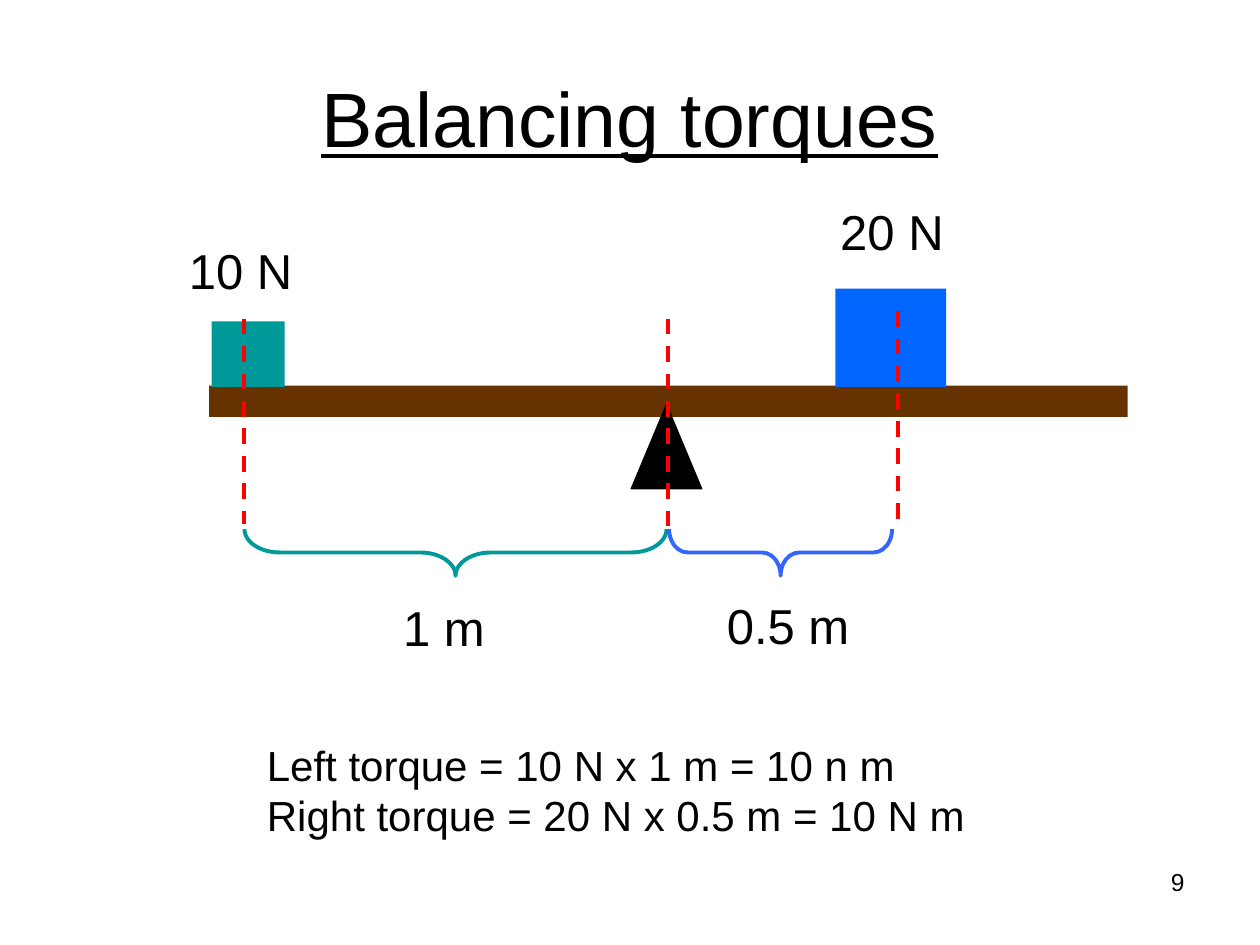
from lxml.etree import SubElement
from pptx import Presentation
from pptx.dml.color import RGBColor
from pptx.enum.dml import MSO_LINE
from pptx.enum.shapes import MSO_CONNECTOR, MSO_SHAPE
from pptx.enum.text import MSO_ANCHOR, MSO_AUTO_SIZE, PP_ALIGN
from pptx.oxml.ns import qn
from pptx.util import Inches, Pt

COLORS = {
    "text": "000000",
    "beam": "663300",
    "pivot": "000000",
    "light_weight": "009999",
    "heavy_weight": "0066FF",
    "left_brace": "009999",
    "right_brace": "3366FF",
    "guide": "FF0000",
}
FONT = "Arial"


def color(name):
    return RGBColor.from_string(COLORS[name])


def format_text(text_frame, size, alignment=PP_ALIGN.LEFT, underline=None):
    for paragraph in text_frame.paragraphs:
        paragraph.alignment = alignment
        for run in paragraph.runs:
            run.font.name = FONT
            run.font.size = Pt(size)
            run.font.underline = underline
            run.font.color.rgb = color("text")


def add_text(slide, box, text, size, alignment=PP_ALIGN.LEFT, wrap=False):
    shape = slide.shapes.add_textbox(*map(Inches, box))
    text_frame = shape.text_frame
    text_frame.text = text
    text_frame.word_wrap = wrap
    if not wrap:
        text_frame.auto_size = MSO_AUTO_SIZE.SHAPE_TO_FIT_TEXT
    format_text(text_frame, size, alignment)


def add_solid(slide, kind, box, color_name):
    shape = slide.shapes.add_shape(kind, *map(Inches, box))
    shape.shadow.inherit = False
    shape.fill.solid()
    shape.fill.fore_color.rgb = color(color_name)
    shape.line.fill.background()
    return shape


def add_guide(slide, x, top, bottom):
    line = slide.shapes.add_connector(
        MSO_CONNECTOR.STRAIGHT, Inches(x), Inches(top), Inches(x), Inches(bottom))
    line.line.color.rgb = color("guide")
    line.line.width = Pt(2.25)
    line.line.dash_style = MSO_LINE.DASH
    SubElement(line._element.spPr, qn("a:effectLst"))


def add_brace_below(slide, box, curve, color_name):
    """Turn a right brace by 90 degrees so that it fills the box, pointing down."""
    left, top, width, height = box
    shape = slide.shapes.add_shape(
        MSO_SHAPE.RIGHT_BRACE,
        Inches(left + (width - height) / 2), Inches(top + (height - width) / 2),
        Inches(height), Inches(width))
    shape.rotation = 90
    shape.adjustments[0] = curve
    shape.shadow.inherit = False
    shape.fill.background()
    shape.line.color.rgb = color(color_name)
    shape.line.width = Pt(2.25)


def add_title(slide, box, text):
    title = slide.shapes.title
    title.left, title.top, title.width, title.height = map(Inches, box)
    title.text_frame.text = text
    title.text_frame.vertical_anchor = MSO_ANCHOR.MIDDLE
    format_text(title.text_frame, 44, PP_ALIGN.CENTER, underline=True)


def add_seesaw(slide, box):
    """Place beam, pivot and both labelled weights; the box is that of the beam."""
    left, top, width, height = box
    add_solid(slide, MSO_SHAPE.RECTANGLE, box, "beam")
    pivot = add_solid(slide, MSO_SHAPE.ISOSCELES_TRIANGLE,
                      (left + 3.35, top + 0.15, 0.56, 0.67), "pivot")
    pivot.line.color.rgb = color("pivot")
    pivot.line.width = Pt(0.75)

    weights = [
        ("10 N", "light_weight", 0.02, 0.58, 0.52, -0.26, -1.2),
        ("20 N", "heavy_weight", 4.97, 0.88, 0.78, 4.91, -1.51),
    ]
    for label, name, x, weight_width, weight_height, label_x, label_y in weights:
        weight_top = top + 0.01 - weight_height
        add_solid(slide, MSO_SHAPE.RECTANGLE,
                  (left + x, weight_top, weight_width, weight_height), name)
        add_text(slide, (left + label_x, top + label_y, 1.02, 0.57), label, 28)


def add_distances(slide, box):
    """Mark both lever arms with dashed guides, braces and lengths."""
    left, top, width, height = box
    for x, start, end in [(0, 0.06, 1.69), (3.36, 0.06, 1.78), (width, 0, 1.65)]:
        add_guide(slide, left + x, top + start, top + end)

    arms = [
        ("1 m", "left_brace", 0, 3.35, 0.755, 1.16, 0.85, 2.22),
        ("0.5 m", "right_brace", 3.37, 1.77, 0.398, 3.73, 1.18, 2.21),
    ]
    for label, name, x, span, curve, label_x, label_width, label_y in arms:
        add_brace_below(slide, (left + x, top + 1.73, span, 0.37), curve, name)
        add_text(slide, (left + label_x, top + label_y, label_width, 0.57), label, 28)


def main():
    presentation = Presentation()
    presentation.slide_width = Inches(10)
    presentation.slide_height = Inches(7.5)
    slide = presentation.slides.add_slide(presentation.slide_layouts[5])

    add_title(slide, (0.5, 0.3, 9, 1.25), "Balancing torques")
    add_seesaw(slide, (1.66, 3.06, 7.29, 0.25))
    add_distances(slide, (1.94, 2.47, 5.19, 2.79))
    add_text(slide, (2.02, 5.82, 5.74, 0.9),
             "Left torque = 10 N x 1 m = 10 n m\n"
             "Right torque = 20 N x 0.5 m = 10 N m", 24)
    add_text(slide, (7.17, 6.83, 2.33, 0.52), "9", 14, PP_ALIGN.RIGHT, wrap=True)

    presentation.save("out.pptx")


if __name__ == "__main__":
    main()
